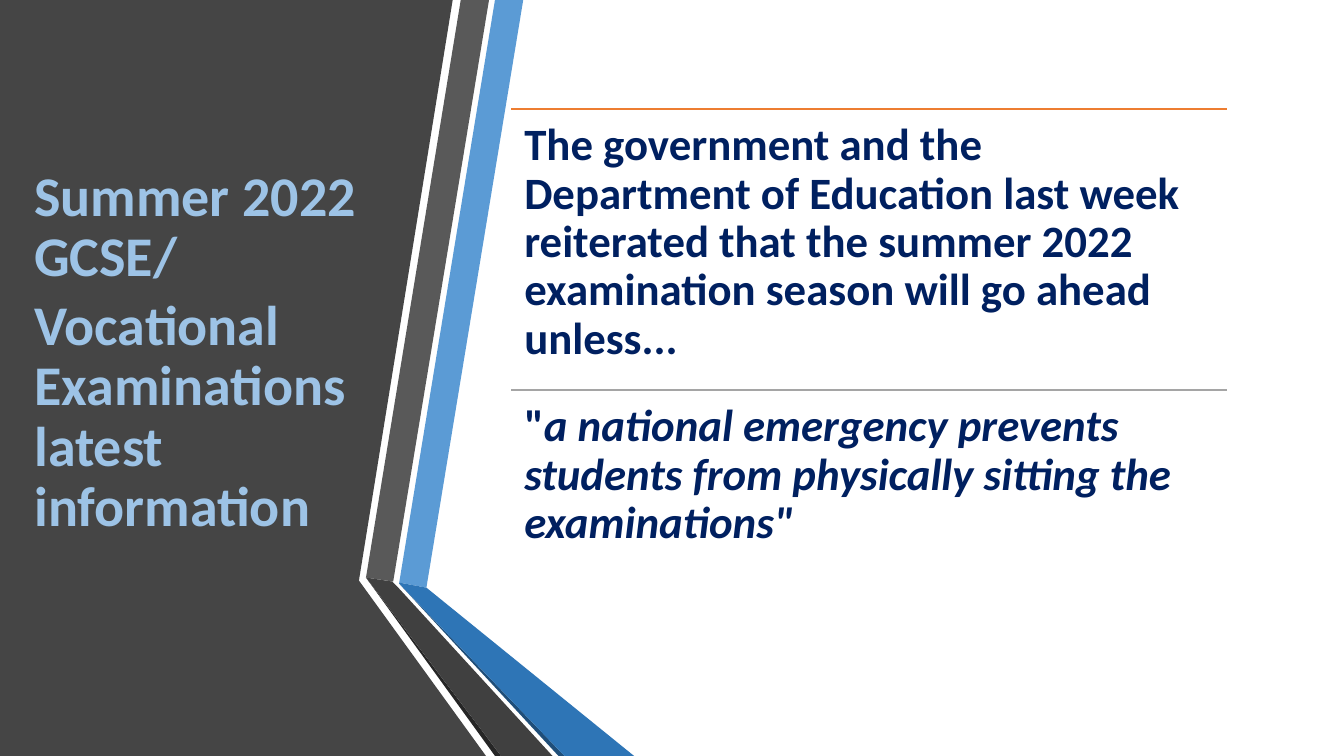
from dataclasses import dataclass

from lxml import etree
from pptx import Presentation
from pptx.dml.color import RGBColor
from pptx.enum.shapes import MSO_CONNECTOR
from pptx.enum.text import MSO_ANCHOR, MSO_AUTO_SIZE, PP_ALIGN
from pptx.oxml.ns import qn
from pptx.slide import Slide
from pptx.util import Pt

PX = 9144  # EMU per px, 100 px to the inch
FONT = "Calibri"
STRAIGHT = MSO_CONNECTOR.STRAIGHT
LEFT = PP_ALIGN.LEFT
TOP, MIDDLE = MSO_ANCHOR.TOP, MSO_ANCHOR.MIDDLE
NO_AUTOFIT = MSO_AUTO_SIZE.NONE

CHARCOAL = RGBColor(0x45, 0x45, 0x45)
SKY = RGBColor(0x5B, 0x9B, 0xD5)
BLUE = RGBColor(0x2E, 0x75, 0xB6)
DEEP_BLUE = RGBColor(0x1F, 0x4E, 0x79)
GREY = RGBColor(0x59, 0x59, 0x59)
DARK_GREY = RGBColor(0x40, 0x40, 0x40)
NEAR_BLACK = RGBColor(0x26, 0x26, 0x26)
PALE_BLUE = RGBColor(0x9D, 0xC3, 0xE6)
NAVY = RGBColor(0x00, 0x20, 0x60)
ORANGE = RGBColor(0xED, 0x7D, 0x31)
SILVER = RGBColor(0xA5, 0xA5, 0xA5)


@dataclass(frozen=True)
class Facet:
    color: RGBColor
    corners: tuple[tuple[int, int], ...]


@dataclass(frozen=True)
class Statement:
    rule_color: RGBColor
    runs: tuple[tuple[str, bool], ...]  # wording, italic


# Side panel and the folded ribbons along its edge, back to front
FACETS = (
    Facet(CHARCOAL, ((0, 0), (449, 0), (356, 576), (482, 750), (0, 750))),
    Facet(SKY, ((396, 578), (423, 583), (519, 0), (491, 0))),
    Facet(GREY, ((485, 0), (457, 0), (363, 573), (390, 577))),
    Facet(NEAR_BLACK, ((363, 573), (491, 750), (497, 750))),
    Facet(DEEP_BLUE, ((396, 579), (554, 750), (560, 750))),
    Facet(BLUE, ((396, 579), (560, 750), (629, 750), (423, 583), (396, 578))),
    Facet(DARK_GREY, ((548, 750), (395, 583), (389, 577), (363, 573), (497, 750))),
)

TITLE_LINES = ("Summer 2022 GCSE/", "Vocational Examinations latest information")

STATEMENTS = (
    Statement(ORANGE, ((
        "The government and the Department of Education last week reiterated "
        "that the summer 2022 examination season will go ahead unless...", False),)),
    Statement(SILVER, (
        ('"', False),
        ("a national emergency prevents students from physically sitting "
         'the examinations"', True))),
)
STATEMENT_LEFT, STATEMENT_TOP = 507, 108
STATEMENT_WIDTH, STATEMENT_HEIGHT = 710, 279
STATEMENT_INSET = 13


def draw_facet(slide: Slide, facet: Facet) -> None:
    start, *others = facet.corners
    outline = slide.shapes.build_freeform(*start, scale=PX)
    outline.add_line_segments(others, close=True)
    ribbon = outline.convert_to_shape()
    ribbon.shadow.inherit = False
    ribbon.fill.solid()
    ribbon.fill.fore_color.rgb = facet.color
    ribbon.line.fill.background()


def format_paragraph(paragraph, size: int, color: RGBColor) -> None:
    paragraph.alignment = LEFT
    paragraph.line_spacing = 0.9
    paragraph.font.name = FONT
    paragraph.font.size = Pt(size)
    paragraph.font.bold = True
    paragraph.font.color.rgb = color


def draw_title(slide: Slide) -> None:
    title = slide.shapes.title
    slide.shapes.element.append(title.element)  # in front of the side panel
    title.left, title.top = 24 * PX, 106 * PX
    title.width, title.height = 362 * PX, 489 * PX
    frame = title.text_frame
    frame.word_wrap = True
    frame.auto_size = NO_AUTOFIT
    frame.vertical_anchor = MIDDLE
    frame.text = "\n".join(TITLE_LINES)
    for paragraph in frame.paragraphs:
        format_paragraph(paragraph, 40, PALE_BLUE)
        paragraph.space_before = Pt(0)
        paragraph.space_after = Pt(6)


def draw_statement(slide: Slide, statement: Statement, top: int) -> None:
    rule = slide.shapes.add_connector(
        STRAIGHT, STATEMENT_LEFT * PX, top * PX,
        (STATEMENT_LEFT + STATEMENT_WIDTH) * PX, top * PX)
    rule.line.color.rgb = statement.rule_color
    rule.line.width = Pt(1)
    etree.SubElement(rule.element.spPr, qn("a:effectLst"))

    wording = slide.shapes.add_textbox(
        STATEMENT_LEFT * PX, top * PX, STATEMENT_WIDTH * PX, STATEMENT_HEIGHT * PX)
    frame = wording.text_frame
    frame.word_wrap = True
    frame.vertical_anchor = TOP
    frame.margin_left = frame.margin_right = STATEMENT_INSET * PX
    frame.margin_top = frame.margin_bottom = STATEMENT_INSET * PX
    paragraph = frame.paragraphs[0]
    format_paragraph(paragraph, 32, NAVY)
    for text, italic in statement.runs:
        run = paragraph.add_run()
        run.text = text
        if italic:
            run.font.italic = True


def main() -> None:
    presentation = Presentation()
    presentation.slide_width, presentation.slide_height = 1333 * PX, 750 * PX
    slide = presentation.slides.add_slide(presentation.slide_layouts[5])

    for facet in FACETS:
        draw_facet(slide, facet)
    draw_title(slide)
    for row, statement in enumerate(STATEMENTS):
        draw_statement(slide, statement, STATEMENT_TOP + row * STATEMENT_HEIGHT)

    presentation.save("out.pptx")


if __name__ == "__main__":
    main()
